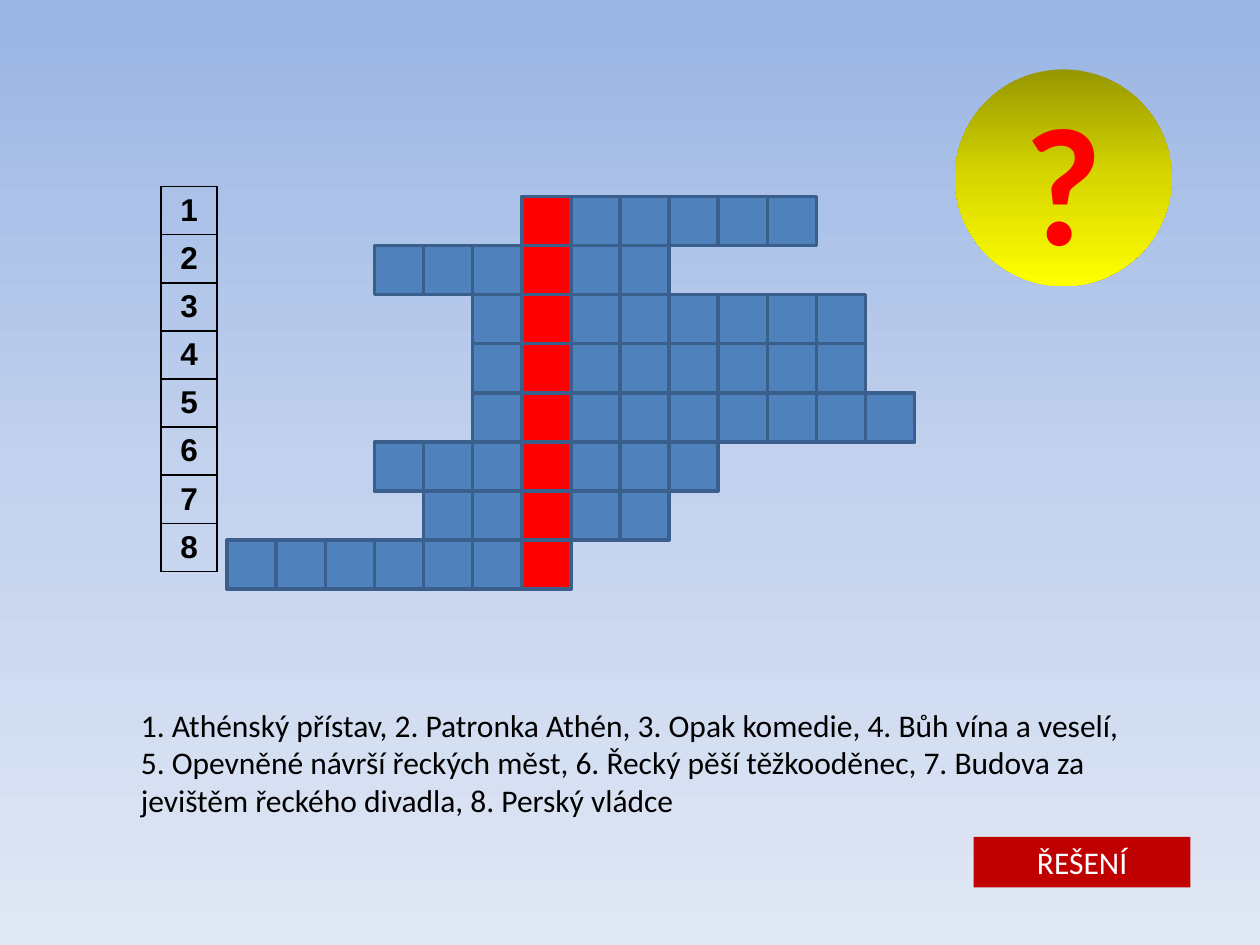
from copy import deepcopy

from lxml import etree
from pptx import Presentation
from pptx.dml.color import RGBColor
from pptx.enum.shapes import MSO_SHAPE
from pptx.enum.text import MSO_ANCHOR, PP_ALIGN
from pptx.oxml.ns import qn
from pptx.util import Cm, Pt

RECTANGLE, OVAL = MSO_SHAPE.RECTANGLE, MSO_SHAPE.OVAL
LEFT, CENTER = PP_ALIGN.LEFT, PP_ALIGN.CENTER
TOP, MIDDLE = MSO_ANCHOR.TOP, MSO_ANCHOR.MIDDLE

COLORS = {
    "square": "4F81BD", "key": "FF0000", "edge": "3A5F8C",
    "black": "000000", "white": "FFFFFF", "button": "C00000",
}
SKY = [(0, "9AB5E4"), (0.5, "C2D1ED"), (1, "E1E8F5")]
GOLD = [(0, "979700"), (0.5, "D7D700"), (1, "FFFF00")]

# Letters before and after the key column, one pair for each answer
ANSWERS = [(0, 5), (3, 2), (1, 6), (1, 6), (1, 7), (3, 3), (2, 2), (6, 0)]
CLUES = [
    "1. Athénský přístav, 2. Patronka Athén, 3. Opak komedie, 4. Bůh vína a veselí,",
    "5. Opevněné návrší řeckých měst, 6. Řecký pěší těžkooděnec, "
    "7. Budova za jevištěm řeckého divadla, 8. Perský vládce",
]

# Lengths in centimetres
SQUARE = 0.99
KEY_LEFT, GRID_TOP = 10.52, 3.96
NUMBER_WIDTH, NUMBER_HEIGHT = 1.12, 0.97


def color(name):
    return RGBColor.from_string(COLORS[name])


def write(frame, lines, size=18, font="Calibri", ink="black", bold=False,
          align=LEFT, anchor=TOP):
    frame.word_wrap = True
    frame.vertical_anchor = anchor
    for index, line in enumerate(lines):
        para = frame.paragraphs[0] if index == 0 else frame.add_paragraph()
        para.alignment = align
        span = para.add_run()
        span.text = line
        span.font.size = Pt(size)
        span.font.name = font
        span.font.bold = bold
        span.font.color.rgb = color(ink)


def fill_gradient(fill, owner, stops):
    """Fill from top to bottom; owner is the XML element that holds the fill."""
    fill.gradient()
    fill.gradient_angle = 270
    stop_list = next(owner.iter(qn("a:gsLst")))
    while len(stop_list) < len(stops):
        stop_list.append(deepcopy(stop_list[0]))
    for stop, (position, value) in zip(fill.gradient_stops, stops):
        stop.position = position
        stop.color.rgb = RGBColor.from_string(value)


def add_box(page, kind, left, top, width, height, fill=None, edge=None):
    box = page.shapes.add_shape(kind, Cm(left), Cm(top), Cm(width), Cm(height))
    box.shadow.inherit = False
    if fill:
        box.fill.solid()
        box.fill.fore_color.rgb = color(fill)
    if edge:
        box.line.color.rgb = color(edge)
        box.line.width = Pt(2)
    else:
        box.line.fill.background()
    return box


def add_borders(cell):
    properties = cell._tc.get_or_add_tcPr()
    for position, side in enumerate(("lnL", "lnR", "lnT", "lnB")):
        line = etree.Element(qn(f"a:{side}"), w=str(Pt(1)))
        solid = etree.SubElement(line, qn("a:solidFill"))
        etree.SubElement(solid, qn("a:srgbClr"), val=COLORS["black"])
        properties.insert(position, line)


def add_crossword(page):
    for row, (before, after) in enumerate(ANSWERS):
        for column in range(-before, after + 1):
            add_box(page, RECTANGLE, KEY_LEFT + column * SQUARE,
                    GRID_TOP + row * SQUARE, SQUARE, SQUARE,
                    fill="square" if column else "key", edge="edge")


def add_numbers(page):
    count = len(ANSWERS)
    table = page.shapes.add_table(
        count, 1, Cm(3.25), Cm(3.76), Cm(NUMBER_WIDTH),
        Cm(NUMBER_HEIGHT * count)).table
    table.first_row = table.horz_banding = False
    for row in range(count):
        table.rows[row].height = Cm(NUMBER_HEIGHT)
        cell = table.cell(row, 0)
        cell.fill.background()
        add_borders(cell)
        write(cell.text_frame, [str(row + 1)], font="Arial", bold=True, align=CENTER)


def main():
    deck = Presentation()
    deck.slide_width, deck.slide_height = Cm(25.4), Cm(19.05)
    page = deck.slides.add_slide(deck.slide_layouts[6])
    fill_gradient(page.background.fill, page._element, SKY)

    add_crossword(page)
    add_numbers(page)

    clues = page.shapes.add_textbox(Cm(2.59), Cm(14.1), Cm(21.03), Cm(2.57))
    write(clues.text_frame, CLUES)

    button = add_box(page, RECTANGLE, 19.63, 16.87, 4.37, 1.02, fill="button")
    write(button.text_frame, ["ŘEŠENÍ"], ink="white", align=CENTER)

    badge = add_box(page, OVAL, 19.25, 1.4, 4.37, 4.37)
    fill_gradient(badge.fill, badge._element, GOLD)
    write(badge.text_frame, ["?"], size=96, ink="key", bold=True,
          align=CENTER, anchor=MIDDLE)

    deck.save("out.pptx")


if __name__ == "__main__":
    main()
